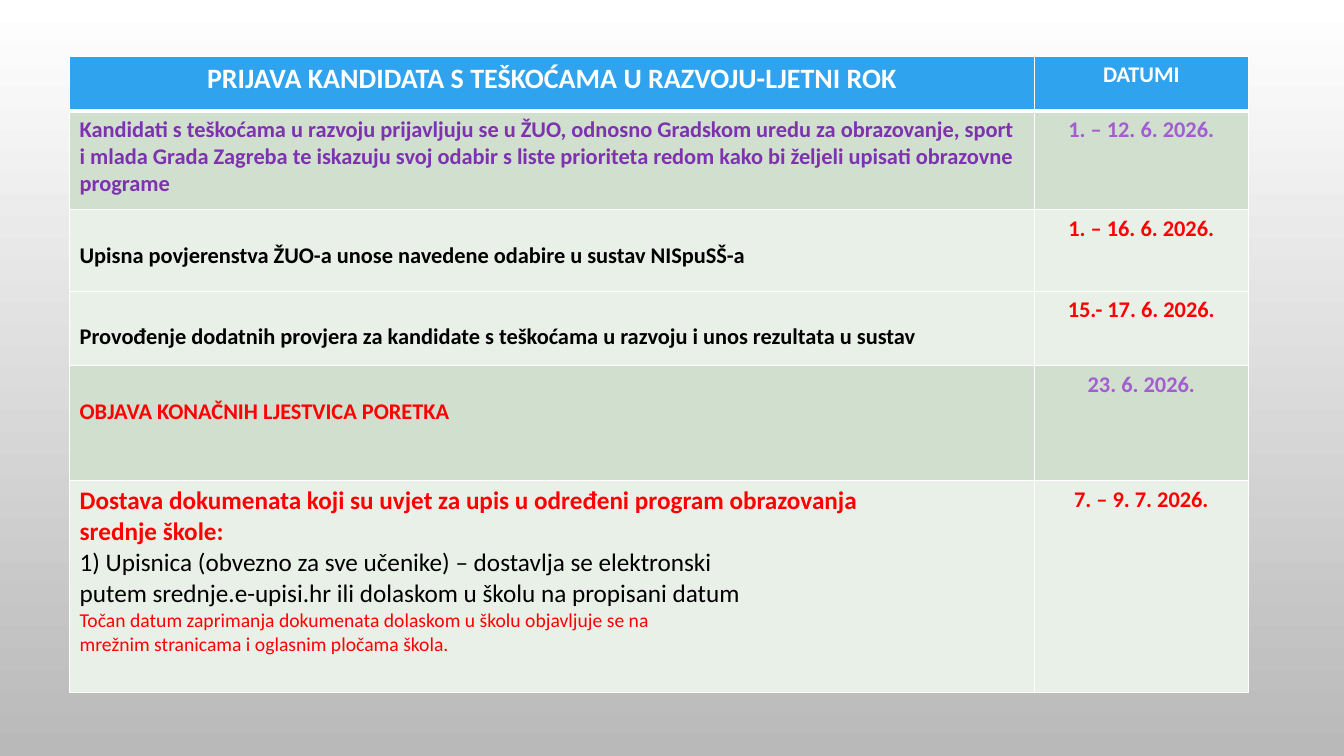
"""Build a slide with the summer enrolment timetable for candidates with difficulties."""
from dataclasses import dataclass

import pptx
import pptx.dml.color
import pptx.enum.text
import pptx.oxml
import pptx.oxml.ns
import pptx.util

Inches = pptx.util.Inches
ALIGN = pptx.enum.text.PP_ALIGN


@dataclass(frozen=True)
class Theme:
    font: str = "Calibri"
    white: str = "FFFFFF"
    grey: str = "B9B9B9"
    blue: str = "2FA3EE"
    green: str = "D1DFCE"
    pale: str = "E9F0E8"
    black: str = "000000"
    red: str = "FF0000"
    purple: str = "7E32B0"
    violet: str = "A35DD1"
    heading: int = 20
    large: int = 18
    body: int = 16
    small: int = 14
    thin: int = 1
    thick: int = 3


THEME = Theme()


@dataclass(frozen=True)
class Line:
    text: str
    color: str
    size: int = THEME.body
    bold: bool = True
    align: ALIGN = ALIGN.LEFT


@dataclass(frozen=True)
class Row:
    height: float
    fill: str
    lines: tuple
    date: str
    date_color: str
    lowered: bool = False


ROWS = [
    Row(0.54, THEME.blue, (
        Line("PRIJAVA KANDIDATA S TEŠKOĆAMA U RAZVOJU-LJETNI ROK", THEME.white, THEME.heading, align=ALIGN.CENTER),
    ), "DATUMI", THEME.white),
    Row(0.98, THEME.green, (
        Line("Kandidati s teškoćama u razvoju prijavljuju se u ŽUO, odnosno Gradskom uredu za "
             "obrazovanje, sport i mlada Grada Zagreba te iskazuju svoj odabir s liste prioriteta "
             "redom kako bi željeli upisati obrazovne programe", THEME.purple),
    ), "1. – 12. 6. 2026.", THEME.violet),
    Row(0.81, THEME.pale, (
        Line("Upisna povjerenstva ŽUO-a unose navedene odabire u sustav NISpuSŠ-a", THEME.black),
    ), "1. – 16. 6. 2026.", THEME.red, True),
    Row(0.74, THEME.pale, (
        Line("Provođenje dodatnih provjera za kandidate s teškoćama u razvoju i unos rezultata u sustav", THEME.black),
    ), "15.- 17. 6. 2026.", THEME.red, True),
    Row(1.14, THEME.green, (
        Line("OBJAVA KONAČNIH LJESTVICA PORETKA", THEME.red),
    ), "23. 6. 2026.", THEME.violet, True),
    Row(2.1, THEME.pale, (
        Line("Dostava dokumenata koji su uvjet za upis u određeni program obrazovanja", THEME.red, THEME.large),
        Line("srednje škole:", THEME.red, THEME.large),
        Line("1) Upisnica (obvezno za sve učenike) – dostavlja se elektronski", THEME.black, THEME.large, False),
        Line("putem srednje.e-upisi.hr ili dolaskom u školu na propisani datum", THEME.black, THEME.large, False),
        Line("Točan datum zaprimanja dokumenata dolaskom u školu objavljuje se na",
             THEME.red, THEME.small, False, ALIGN.JUSTIFY),
        Line("mrežnim stranicama i oglasnim pločama škola.", THEME.red, THEME.small, False, ALIGN.JUSTIFY),
    ), "7. – 9. 7. 2026.", THEME.red),
]
COLUMN_WIDTHS = (9.57, 2.12)
TABLE_LEFT, TABLE_TOP = 0.69, 0.56
LOWERED_MARGIN = 0.32


def rgb(value):
    return pptx.dml.color.RGBColor.from_string(value)


def add_borders(cell, top, bottom):
    properties = cell._tc.get_or_add_tcPr()
    widths = {"lnL": THEME.thin, "lnR": THEME.thin, "lnT": top, "lnB": bottom}
    for tag, width in widths.items():
        properties.append(pptx.oxml.parse_xml(
            f'<a:{tag} {pptx.oxml.ns.nsdecls("a")} w="{pptx.util.Pt(width)}">'
            f'<a:solidFill><a:srgbClr val="{THEME.white}"/></a:solidFill></a:{tag}>'))


def fill_cell(cell, lines, fill, row_index):
    add_borders(cell,
                THEME.thick if row_index == 1 else THEME.thin,
                THEME.thick if row_index == 0 else THEME.thin)
    cell.fill.solid()
    cell.fill.fore_color.rgb = rgb(fill)
    for index, line in enumerate(lines):
        frame = cell.text_frame
        paragraph = frame.add_paragraph() if index else frame.paragraphs[0]
        paragraph.alignment = line.align
        run = paragraph.add_run()
        run.text = line.text
        run.font.name = THEME.font
        run.font.size = pptx.util.Pt(line.size)
        run.font.bold = line.bold
        run.font.color.rgb = rgb(line.color)


def set_background(slide):
    fill = slide.background.fill
    fill.gradient()
    fill.gradient_angle = 270
    for stop, position, color in zip(fill.gradient_stops, (0, 1), (THEME.white, THEME.grey)):
        stop.position = position
        stop.color.rgb = rgb(color)


def add_timetable(slide):
    frame = slide.shapes.add_table(
        len(ROWS), len(COLUMN_WIDTHS), Inches(TABLE_LEFT), Inches(TABLE_TOP),
        Inches(sum(COLUMN_WIDTHS)), Inches(sum(row.height for row in ROWS)))
    table = frame.table
    table.horz_banding = False
    for column, width in zip(table.columns, COLUMN_WIDTHS):
        column.width = Inches(width)
    for index, row in enumerate(ROWS):
        table.rows[index].height = Inches(row.height)
        task, date = table.cell(index, 0), table.cell(index, 1)
        fill_cell(task, row.lines, row.fill, index)
        fill_cell(date, [Line(row.date, row.date_color, align=ALIGN.CENTER)], row.fill, index)
        if row.lowered:
            task.margin_top = Inches(LOWERED_MARGIN)


def main():
    presentation = pptx.Presentation()
    presentation.slide_width = Inches(13.33)
    presentation.slide_height = Inches(7.5)
    slide = presentation.slides.add_slide(presentation.slide_layouts[6])
    set_background(slide)
    add_timetable(slide)
    presentation.save("out.pptx")


if __name__ == "__main__":
    main()
